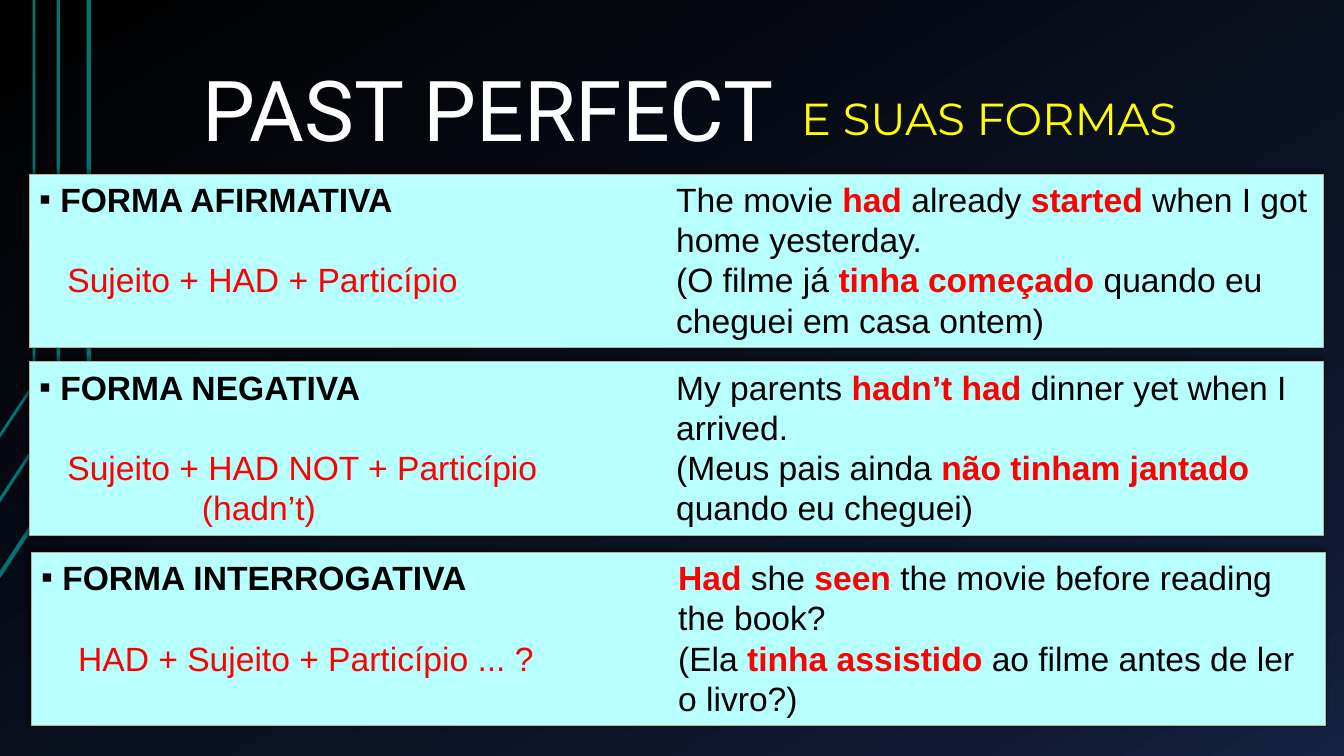
from copy import deepcopy

from pptx import Presentation
from pptx.dml.color import RGBColor
from pptx.enum import shapes, text
from pptx.oxml import ns, parse_xml
from pptx.util import Cm, Pt

BLACK, RED, WHITE, YELLOW = "000000", "FF0000", "FFFFFF", "FFFF00"
PANEL, PANEL_EDGE, TEAL = "B8FFFF", "BBB29B", "007373"
LINE_HEIGHT = Pt(28.7)
PANEL_W, PANEL_H = 32.61, 4.37
EXAMPLE_OFFSET = 16.05

# left, top, heading, [(formula line, indent)], examples with |emphasis|
FORMS = [
    (0.74, 4.39, "FORMA AFIRMATIVA",
     [("Sujeito + HAD + Particípio", 0.71)],
     ["The movie |had |already |started| when I got home yesterday.",
      "(O filme já |tinha começado |quando eu cheguei em casa ontem)"]),
    (0.74, 9.12, "FORMA NEGATIVA",
     [("Sujeito + HAD NOT + Particípio", 0.71), ("(hadn’t)", 4.1)],
     ["My parents |hadn’t had |dinner yet when I arrived.",
      "(Meus pais ainda |não tinham jantado |quando eu cheguei)"]),
    (0.79, 13.92, "FORMA INTERROGATIVA",
     [("HAD + Sujeito + Particípio ... ?", 0.93)],
     ["|Had |she |seen |the movie before reading the book?",
      "(Ela |tinha assistido |ao filme antes de ler o livro?)"]),
]

# points of each circuit line and its width
CIRCUITS = [
    ([(-0.03, 14.53), (2.24, 11.05), (2.24, 0)], 3),
    ([(-0.05, 12.67), (1.47, 10.36), (1.47, 0)], 2.25),
    ([(-0.03, 11.02), (0.86, 9.68), (0.86, 0)], 2),
]


def rgb(value):
    return RGBColor.from_string(value)


def add_run(paragraph, words, color, size=24, font="Arial", bold=False):
    run = paragraph.add_run()
    run.text = words
    run.font.name = font
    run.font.size = Pt(size)
    run.font.bold = bold
    run.font.color.rgb = rgb(color)


def next_paragraph(frame, indent=0, before=0):
    """Return an unused paragraph with the common line height."""
    paragraph = frame.paragraphs[0]
    if paragraph.runs:
        paragraph = frame.add_paragraph()
    paragraph.alignment = text.PP_ALIGN.LEFT
    paragraph.line_spacing = LINE_HEIGHT
    paragraph.space_before = before
    paragraph._p.get_or_add_pPr().set("marL", str(Cm(indent)))
    return paragraph


def add_bullet(paragraph, indent):
    properties = paragraph._p.get_or_add_pPr()
    properties.set("indent", str(-Cm(indent)))
    properties.append(parse_xml(
        f'<a:buFont {ns.nsdecls("a")} typeface="Arial"/>'))
    properties.append(parse_xml(
        f'<a:buChar {ns.nsdecls("a")} char="▪"/>'))


def add_shadow(shape):
    shape.shadow.inherit = False
    effects = shape._element.spPr.find(ns.qn("a:effectLst"))
    effects.append(parse_xml(
        f'<a:outerShdw {ns.nsdecls("a")} blurRad="{Pt(4)}" dist="{Pt(3)}" '
        f'dir="13500000"><a:srgbClr val="{BLACK}"><a:alpha val="40000"/>'
        '</a:srgbClr></a:outerShdw>'))


def paint_background(slide):
    fill = slide.background.fill
    fill.gradient()
    fill.gradient_angle = 300
    last = slide._element.findall(".//" + ns.qn("a:gs"))[-1]
    last.addnext(deepcopy(last))
    colors = [(0, BLACK), (0.85, "0F1931"), (1, "142242")]
    for stop, (position, color) in zip(fill.gradient_stops, colors):
        stop.position = position
        stop.color.rgb = rgb(color)


def add_circuit(slide, points, width):
    start, *others = [(Cm(x), Cm(y)) for x, y in points]
    builder = slide.shapes.build_freeform(*start)
    builder.add_line_segments(others, close=False)
    circuit = builder.convert_to_shape()
    circuit.fill.background()
    circuit.line.color.rgb = rgb(TEAL)
    circuit.line.width = Pt(width)
    circuit.shadow.inherit = False


def add_textbox(slide, left, top, width, height):
    box = slide.shapes.add_textbox(Cm(left), Cm(top), Cm(width), Cm(height))
    box.text_frame.word_wrap = True
    return box.text_frame


def add_title(slide):
    title = slide.shapes.title
    title.left, title.top = Cm(4.72), Cm(1.3)
    title.width, title.height = Cm(15.16), Cm(2.82)
    frame = title.text_frame
    frame.auto_size = text.MSO_AUTO_SIZE.NONE
    frame.word_wrap = True
    heading = frame.paragraphs[0]
    heading.alignment = text.PP_ALIGN.CENTER
    add_run(heading, "PAST PERFECT", WHITE, 60, "Roboto")


def add_subtitle(slide):
    subtitle = add_textbox(slide, 17.12, 2.16, 12.8, 1.63).paragraphs[0]
    subtitle.alignment = text.PP_ALIGN.RIGHT
    add_run(subtitle, "E SUAS FORMAS", YELLOW, 32, "Montserrat")


def add_form(slide, left, top, heading, formula, examples):
    """Add a panel with the rule on the left and its examples on the right."""
    panel = slide.shapes.add_shape(
        shapes.MSO_SHAPE.RECTANGLE, Cm(left), Cm(top), Cm(PANEL_W), Cm(PANEL_H))
    panel.fill.solid()
    panel.fill.fore_color.rgb = rgb(PANEL)
    panel.line.color.rgb = rgb(PANEL_EDGE)
    panel.line.width = Pt(0.75)
    add_shadow(panel)

    rule = panel.text_frame
    rule.word_wrap = True
    rule.vertical_anchor = text.MSO_ANCHOR.TOP
    rule.margin_right = Cm(PANEL_W - EXAMPLE_OFFSET)
    name = next_paragraph(rule, 0.53)
    add_bullet(name, 0.53)
    add_run(name, heading, BLACK, bold=True)
    for number, (words, indent) in enumerate(formula):
        gap = 0 if number else LINE_HEIGHT
        add_run(next_paragraph(rule, indent, gap), words, RED)

    example_frame = add_textbox(slide, left + EXAMPLE_OFFSET, top,
                                PANEL_W - EXAMPLE_OFFSET, PANEL_H)
    for example in examples:
        sentence = next_paragraph(example_frame)
        for number, words in enumerate(example.split("|")):
            strong = number % 2 == 1
            if words:
                add_run(sentence, words, RED if strong else BLACK, bold=strong)


def main():
    deck = Presentation()
    deck.slide_width, deck.slide_height = Cm(33.87), Cm(19.05)
    slide = deck.slides.add_slide(deck.slide_layouts[5])
    paint_background(slide)
    for points, width in CIRCUITS:
        add_circuit(slide, points, width)
    add_title(slide)
    for form in FORMS:
        add_form(slide, *form)
    add_subtitle(slide)
    deck.save("out.pptx")


if __name__ == "__main__":
    main()
